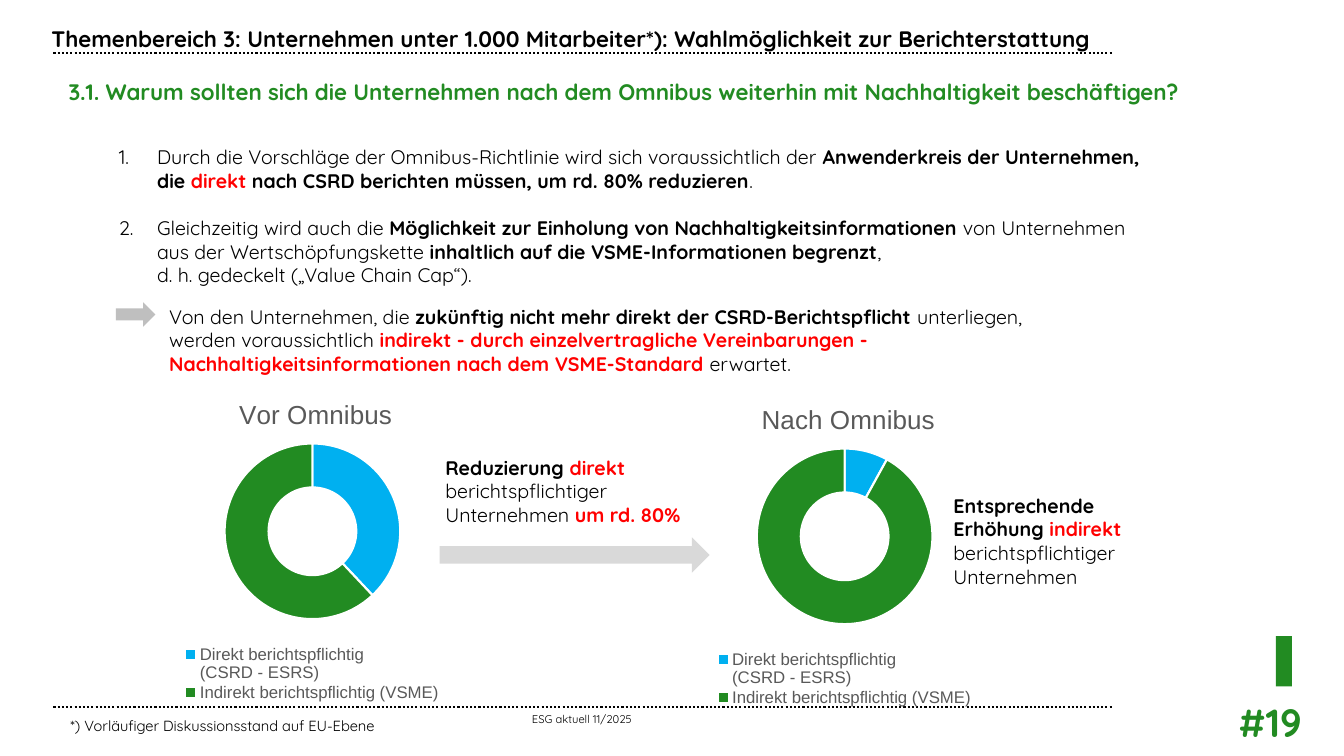
import lxml.etree
import pptx
import pptx.chart.data
import pptx.dml.color
import pptx.enum.chart
import pptx.enum.dml
import pptx.enum.shapes
import pptx.enum.text
import pptx.oxml
import pptx.oxml.ns
import pptx.util

Pt = pptx.util.Pt
RGB = pptx.dml.color.RGBColor.from_string
ALIGN = pptx.enum.text.PP_ALIGN
ANCHOR = pptx.enum.text.MSO_ANCHOR
SHAPE = pptx.enum.shapes.MSO_SHAPE

THEME = {
    "font": "Quicksand", "chart font": "Arial",
    "black": "000000", "red": "FF0000", "green": "228B22", "blue": "00B0F0",
    "grey": "595959", "arrow": "D9D9D9", "small arrow": "BFBFBF", "white": "FFFFFF",
    "heading": 16, "body": 14, "note": 10.5, "footer": 8, "number": 28,
    "chart title": 18.6, "legend": 12,
}
# style name: colour, bold
STYLES = {"plain": ("black", False), "bold": ("black", True),
          "red": ("red", True), "green": ("green", True)}

deck = pptx.Presentation()
deck.slide_width, deck.slide_height = pptx.util.Inches(13.33), pptx.util.Inches(7.5)
page = deck.slides.add_slide(deck.slide_layouts[6])
# The grid has 100 columns and 100 rows.
COLUMN, ROW = deck.slide_width / 100, deck.slide_height / 100
GRID = (COLUMN, ROW, COLUMN, ROW)


def write(area, *paragraphs, size, align=ALIGN.LEFT, anchor=ANCHOR.TOP, inset=True):
    """Add a text box at a grid area; a paragraph is a list of (text, style)."""
    box = page.shapes.add_textbox(*[int(n * unit) for n, unit in zip(area, GRID)])
    frame = box.text_frame
    frame.word_wrap, frame.vertical_anchor = True, anchor
    if not inset:
        frame.margin_left = frame.margin_right = frame.margin_top = frame.margin_bottom = 0
    for index, spans in enumerate(paragraphs):
        para = frame.add_paragraph() if index else frame.paragraphs[0]
        para.alignment = align
        for text, style in spans:
            for number, line in enumerate(text.split("\n")):
                if number:
                    para.add_line_break()
                span = para.add_run()
                span.text = line
                color, span.font.bold = STYLES[style]
                span.font.name, span.font.size = THEME["font"], Pt(THEME[size])
                span.font.color.rgb = RGB(THEME[color])
    return frame.paragraphs


def set_layout(part, **values):
    """Place a chart part by shares of the chart's size."""
    for old in part.xpath("c:layout"):
        part.remove(old)
    layout = lxml.etree.Element(pptx.oxml.ns.qn("c:layout"))
    manual = lxml.etree.SubElement(layout, pptx.oxml.ns.qn("c:manualLayout"))
    for name, value in ({"xMode": "edge", "yMode": "edge"} | values).items():
        lxml.etree.SubElement(manual, pptx.oxml.ns.qn("c:" + name), val=str(value))
    part.xpath("c:overlay | c:doughnutChart")[0].addprevious(layout)


# Dotted rules
for row in (7, 93.47):
    rule = page.shapes.add_connector(
        pptx.enum.shapes.MSO_CONNECTOR.STRAIGHT,
        int(3.98 * COLUMN), int(row * ROW), int(82.8 * COLUMN), int(row * ROW))
    rule.line.color.rgb, rule.line.width = RGB(THEME["black"]), Pt(1.5)
    rule.line.dash_style = pptx.enum.dml.MSO_LINE.ROUND_DOT
    lxml.etree.SubElement(rule.element.spPr, pptx.oxml.ns.qn("a:effectLst"))

# Headings and footer
write((3.08, 2.67, 82.13, 4.93),
      [("Themenbereich 3: Unternehmen unter 1.000 Mitarbeiter*): "
        "Wahlmöglichkeit zur Berichterstattung", "bold")], size="heading")
write((5.1, 10.4, 87.45, 4.93),
      [("3.1. Warum sollten sich die Unternehmen nach dem Omnibus weiterhin "
        "mit Nachhaltigkeit beschäftigen?", "green")], size="heading", inset=False)
write((85.43, 91.73, 12.15, 7.6), [("#19", "green")], size="number", align=ALIGN.RIGHT)
write((3.9, 94.27, 78.83, 1.73), [("ESG aktuell 11/2025", "plain")],
      size="footer", align=ALIGN.CENTER, anchor=ANCHOR.MIDDLE, inset=False)
write((4.5, 94.13, 33.68, 3.87),
      [("*) Vorläufiger Diskussionsstand auf EU-Ebene", "plain")], size="note")

# Doughnut charts
CATEGORIES = ("Direkt berichtspflichtig\n(CSRD - ESRS)", "Indirekt berichtspflichtig (VSME)")
for title, left, top, title_x, values in (
        ("Vor Omnibus", 5.1, 49.73, 0.34, (38, 62)),
        ("Nach Omnibus", 44.7, 50.4, 0.32, (8, 92))):
    data = pptx.chart.data.CategoryChartData()
    data.categories = CATEGORIES
    data.add_series("Series 1", values)
    chart = page.shapes.add_chart(
        pptx.enum.chart.XL_CHART_TYPE.DOUGHNUT, int(left * COLUMN), int(top * ROW),
        int(36.3 * COLUMN), int(43.73 * ROW), data).chart
    chart.font.name, chart.font.size = THEME["chart font"], Pt(10)
    chart.font.color.rgb = RGB(THEME["black"])

    chart.has_title = True
    para = chart.chart_title.text_frame.paragraphs[0]
    span = para.add_run()
    span.text = title
    chart.has_legend = True
    chart.legend.position = pptx.enum.chart.XL_LEGEND_POSITION.BOTTOM
    chart.legend.include_in_layout = False
    for font, size in ((span.font, "chart title"), (chart.legend.font, "legend")):
        font.name, font.size, font.bold = THEME["chart font"], Pt(THEME[size]), False
        font.color.rgb = RGB(THEME["grey"])

    plot = chart.plots[0]
    plot.vary_by_categories = True
    for index, color in enumerate(("blue", "green")):
        slice_format = plot.series[0].points[index].format
        slice_format.fill.solid()
        slice_format.fill.fore_color.rgb = RGB(THEME[color])
        slice_format.line.color.rgb = RGB(THEME["white"])
        slice_format.line.width = Pt(1.5)
    chart.element.xpath(".//c:holeSize")[0].set("val", "75")

    area = chart.element.xpath("c:chart")[0]
    set_layout(area.xpath("c:title")[0], x=title_x, y=0.05)
    set_layout(area.xpath("c:plotArea")[0], layoutTarget="inner", x=0.32, y=0.2, w=0.36, h=0.54)
    set_layout(area.xpath("c:legend")[0], x=0.23, y=0.81, w=0.54, h=0.18)

# Arrows and the green marker
for kind, color, area in (
        (SHAPE.RIGHT_ARROW, "arrow", (32.7, 71.07, 20.1, 4.67)),
        (SHAPE.RIGHT_ARROW, "small arrow", (8.63, 40, 2.93, 3.2)),
        (SHAPE.RECTANGLE, "green", (94.93, 84.13, 1.2, 6.67))):
    shape = page.shapes.add_shape(kind, *[int(n * unit) for n, unit in zip(area, GRID)])
    shape.shadow.inherit = False
    shape.fill.solid()
    shape.fill.fore_color.rgb = RGB(THEME[color])
    shape.line.fill.background()

# Notes beside the charts
write((32.4, 59.6, 22.43, 10.8),
      [("Reduzierung ", "bold"), ("direkt", "red"),
       (" berichtspflichtiger Unternehmen ", "plain"), ("um rd. 80%", "red")], size="body")
write((70.2, 64.67, 14.03, 13.87),
      [("Entsprechende Erhöhung ", "bold"), ("indirekt", "red"),
       (" berichtspflichtiger Unternehmen", "plain")], size="body")

# Numbered statements and conclusion
*statements, conclusion = write(
    (8.1, 18.53, 77.93, 32.8),
    [("Durch die Vorschläge der Omnibus-Richtlinie wird sich voraussichtlich der ", "plain"),
     ("Anwenderkreis der Unternehmen, die ", "bold"), ("direkt ", "red"),
     ("nach CSRD berichten müssen, um rd. 80% reduzieren", "bold"), (".", "plain")],
    [("Gleichzeitig wird auch die ", "plain"),
     ("Möglichkeit zur Einholung von Nachhaltigkeitsinformationen ", "bold"),
     ("von Unternehmen aus der Wertschöpfungskette ", "plain"),
     ("inhaltlich auf die VSME-Informationen begrenzt", "bold"),
     (", \nd. h. gedeckelt („Value Chain Cap“).", "plain")],
    [("Von den Unternehmen, die ", "plain"),
     ("zukünftig nicht mehr direkt der CSRD-Berichtspflicht ", "bold"),
     ("unterliegen, \nwerden voraussichtlich ", "plain"),
     ("indirekt - durch einzelvertragliche Vereinbarungen - \n"
      "Nachhaltigkeitsinformationen nach dem VSME-Standard ", "red"),
     ("erwartet.", "plain")],
    size="body")
statements[1].space_before, conclusion.space_before = Pt(17), Pt(13)
indent = int(2.85 * COLUMN)
for number, para in enumerate(statements, 1):
    properties = para._p.get_or_add_pPr()
    properties.set("marL", str(indent))
    properties.set("indent", str(-indent))
    lxml.etree.SubElement(properties, pptx.oxml.ns.qn("a:buFont"), typeface=THEME["font"])
    lxml.etree.SubElement(properties, pptx.oxml.ns.qn("a:buAutoNum"),
                          type="arabicPeriod", startAt=str(number))
conclusion._p.get_or_add_pPr().set("marL", str(int(3.75 * COLUMN)))

deck.save("out.pptx")
